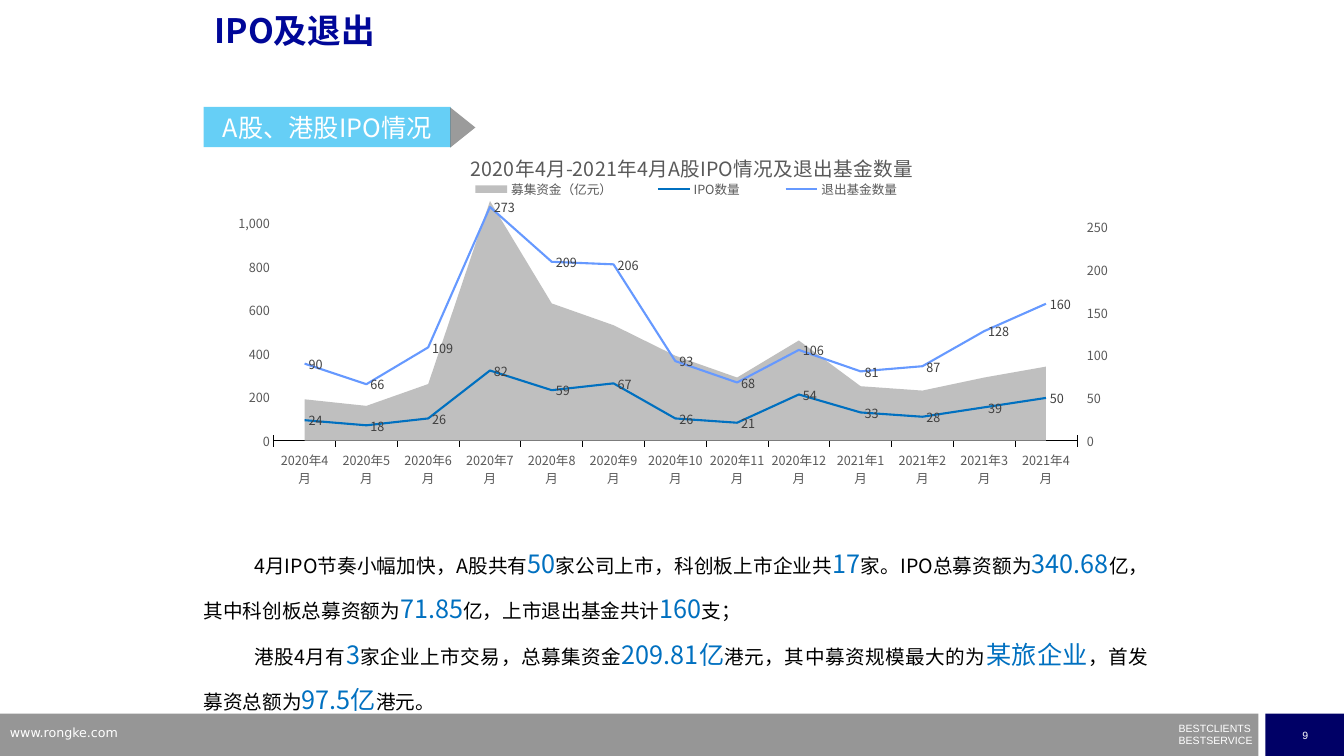
from lxml import etree
from pptx import Presentation
from pptx import util as u
from pptx.chart.data import CategoryChartData
from pptx.dml.color import RGBColor
from pptx.enum import chart as ch, shapes, text
from pptx.oxml import parse_xml
from pptx.oxml.ns import nsdecls, qn

CJK = "Noto Sans CJK SC"
COLORS = {"white": "FFFFFF", "black": "000000", "bar": "969696", "navy": "000066",
          "title": "000798", "tag": "00B0F0", "arrow": "595959", "accent": "0070C0",
          "label": "404040", "area": "BFBFBF", "exits": "6699FF"}

TITLE = "IPO及退出"
TAG = "A股、港股IPO情况"
CHART_TITLE = "2020年4月-2021年4月A股IPO情况及退出基金数量"
MONTHS = ([f"2020年{month}月" for month in range(4, 13)]
          + [f"2021年{month}月" for month in range(1, 5)])
SERIES = [
    ("募集资金（亿元）", "area", [190, 160, 260, 1100, 630, 530, 390, 290, 460, 250, 230, 290, 340]),
    ("IPO数量", "accent", [24, 18, 26, 82, 59, 67, 26, 21, 54, 33, 28, 39, 50]),
    ("退出基金数量", "exits", [90, 66, 109, 273, 209, 206, 93, 68, 106, 81, 87, 128, 160]),
]
# Runs alternate between plain text and highlighted figures.
SUMMARY = [
    ["4月IPO节奏小幅加快，A股共有", "50", "家公司上市，科创板上市企业共", "17",
     "家。IPO总募资额为", "340.68", "亿，其中科创板总募资额为", "71.85",
     "亿，上市退出基金共计", "160", "支；"],
    ["港股4月有", "3", "家企业上市交易，总募集资金", "209.81亿",
     "港元，其中募资规模最大的为", "某旅企业", "，首发募资总额为", "97.5亿", "港元。"],
]
PLOT_BOX = (0.082, 0.155, 0.843, 0.61)
LEGEND_BOX = (0.25, 0.1, 0.53, 0.05)
TITLE_POINT = (0.285, 0.02)


def set_attributes(target, **values):
    for name, value in values.items():
        setattr(target, name, value)


def set_font(font, size, color, name=CJK, bold=False):
    """Set the font for both Latin and East Asian characters."""
    set_attributes(font, size=u.Pt(size), name=name, bold=bold)
    font.color.rgb = RGBColor.from_string(COLORS[color])
    etree.SubElement(font._rPr, qn("a:ea")).set("typeface", name)


def add_run(paragraph, words, *font):
    run = paragraph.add_run()
    run.text = words
    set_font(run.font, *font)


def add_filled(slide, preset, box, color, opacity=None):
    shape = slide.shapes.add_shape(preset, *map(u.Inches, box))
    shape.shadow.inherit = False
    shape.fill.solid()
    shape.fill.fore_color.rgb = RGBColor.from_string(COLORS[color])
    shape.line.fill.background()
    if opacity:
        rgb = shape.fill._xPr.find(".//" + qn("a:srgbClr"))
        etree.SubElement(rgb, qn("a:alpha")).set("val", str(opacity * 1000))
    return shape


def add_centred(shape, words, *font, wrap=True):
    set_attributes(shape.text_frame, word_wrap=wrap, vertical_anchor=text.MSO_ANCHOR.MIDDLE)
    paragraph = shape.text_frame.paragraphs[0]
    paragraph.alignment = text.PP_ALIGN.CENTER
    add_run(paragraph, words, *font)


def add_text(slide, box, paragraphs, inset=True, indent=0, **layout):
    """Add a text box; each paragraph is a list of (words, size, colour, ...) runs."""
    frame = slide.shapes.add_textbox(*map(u.Inches, box)).text_frame
    frame.word_wrap = True
    if not inset:
        set_attributes(frame, margin_left=0, margin_top=0, margin_right=0, margin_bottom=0)
    for index, runs in enumerate(paragraphs):
        paragraph = frame.add_paragraph() if index else frame.paragraphs[0]
        set_attributes(paragraph, **layout)
        if not index:
            paragraph.space_before = u.Pt(0)
        if indent:
            paragraph._p.get_or_add_pPr().set("indent", str(u.Inches(indent)))
        for run in runs:
            add_run(paragraph, *run)


def layout_xml(box, inner=False):
    target = '<c:layoutTarget val="inner"/>' if inner else ""
    modes = "".join(f'<c:{axis}Mode val="edge"/>' for axis in "xy")
    sizes = "".join(f'<c:{key} val="{value}"/>' for key, value in zip("xywh", box))
    return parse_xml(f'<c:layout {nsdecls("c")}><c:manualLayout>{target}{modes}{sizes}'
                     '</c:manualLayout></c:layout>')


def place(element, box, after=None, inner=False):
    """Give a chart part a fixed position, as fractions of the chart."""
    for old in element.findall(qn("c:layout")):
        element.remove(old)
    previous = element.find(qn(after)) if after else None
    element.insert(0 if previous is None else element.index(previous) + 1,
                   layout_xml(box, inner))


def move_to_right_axis(plot_area):
    """Turn all series but the first into lines on a second value axis."""
    area = plot_area.find(qn("c:areaChart"))
    lines = parse_xml(f'<c:lineChart {nsdecls("c")}><c:grouping val="standard"/>'
                      '<c:varyColors val="0"/><c:marker val="1"/>'
                      '<c:axId val="5001"/><c:axId val="5002"/></c:lineChart>')
    for offset, series in enumerate(area.findall(qn("c:ser"))[1:]):
        lines.insert(2 + offset, series)
    area.addnext(lines)
    last_axis = plot_area.find(qn("c:valAx"))
    last_axis.find(qn("c:crossBetween")).set("val", "between")
    for kind, own, other, hidden, side, extra in (
            ("valAx", 5002, 5001, 0, "r",
             '<c:crosses val="max"/><c:crossBetween val="between"/><c:majorUnit val="50"/>'),
            ("catAx", 5001, 5002, 1, "b", '<c:crosses val="autoZero"/>')):
        limits = '<c:max val="280"/><c:min val="0"/>' if kind == "valAx" else ""
        last_axis.addnext(parse_xml(
            f'<c:{kind} {nsdecls("c", "a")}><c:axId val="{own}"/><c:scaling>'
            f'<c:orientation val="minMax"/>{limits}</c:scaling><c:delete val="{hidden}"/>'
            f'<c:axPos val="{side}"/><c:numFmt formatCode="0" sourceLinked="0"/>'
            '<c:majorTickMark val="out"/><c:minorTickMark val="none"/>'
            '<c:tickLblPos val="nextTo"/><c:spPr><a:ln><a:noFill/></a:ln></c:spPr>'
            '<c:txPr><a:bodyPr/><a:p><a:pPr><a:defRPr sz="900"><a:solidFill>'
            f'<a:srgbClr val="{COLORS["arrow"]}"/></a:solidFill><a:latin typeface="{CJK}"/>'
            f'<a:ea typeface="{CJK}"/></a:defRPr></a:pPr></a:p></c:txPr>'
            f'<c:crossAx val="{other}"/>{extra}</c:{kind}>'))


def add_ipo_chart(slide, box):
    data = CategoryChartData()
    data.categories = MONTHS
    for name, _, values in SERIES:
        data.add_series(name, values)
    chart = slide.shapes.add_chart(ch.XL_CHART_TYPE.AREA, *map(u.Inches, box), data).chart
    set_font(chart.font, 10, "black")

    chart.has_title = True
    add_run(chart.chart_title.text_frame.paragraphs[0], CHART_TITLE, 14, "arrow")
    place(chart.chart_title._element, TITLE_POINT, "c:tx")
    chart.has_legend = True
    set_attributes(chart.legend, position=ch.XL_LEGEND_POSITION.TOP, include_in_layout=False)
    set_font(chart.legend.font, 9, "arrow")
    place(chart.legend._element, LEGEND_BOX, "c:legendPos")

    months, funds = chart.category_axis, chart.value_axis
    set_attributes(months, major_tick_mark=ch.XL_TICK_MARK.CROSS, has_major_gridlines=False)
    months.format.line.width = u.Pt(0.5)
    months.format.line.color.rgb = RGBColor.from_string(COLORS["black"])
    set_attributes(funds, minimum_scale=0, maximum_scale=1100, major_unit=200,
                   has_major_gridlines=False, major_tick_mark=ch.XL_TICK_MARK.NONE)
    set_attributes(funds.tick_labels, number_format="#,##0", number_format_is_linked=False)
    funds.format.line.fill.background()
    for axis in (months, funds):
        set_font(axis.tick_labels.font, 9, "arrow")

    plot_area = chart._chartSpace.chart.plotArea
    place(plot_area, PLOT_BOX, inner=True)
    move_to_right_axis(plot_area)
    area_plot, line_plot = chart.plots
    area_plot.vary_by_categories = False
    fill = area_plot.series[0].format.fill
    fill.solid()
    fill.fore_color.rgb = RGBColor.from_string(COLORS[SERIES[0][1]])
    for series, (_, color, _) in zip(line_plot.series, SERIES[1:]):
        series.smooth = False
        series.marker.style = ch.XL_MARKER_STYLE.NONE
        series.format.line.width = u.Pt(1.5)
        series.format.line.color.rgb = RGBColor.from_string(COLORS[color])
        set_attributes(series.data_labels, show_value=True, number_format="0",
                       number_format_is_linked=False, position=ch.XL_LABEL_POSITION.RIGHT)
        set_font(series.data_labels.font, 9, "label")


def main():
    presentation = Presentation()
    set_attributes(presentation, slide_width=u.Inches(13.33), slide_height=u.Inches(7.5))
    slide = presentation.slides.add_slide(presentation.slide_layouts[6])
    preset = shapes.MSO_SHAPE

    add_filled(slide, preset.RECTANGLE, (0, 7.08, 12.48, 0.42), "bar")
    page = add_filled(slide, preset.RECTANGLE, (12.55, 7.08, 0.79, 0.42), "navy")
    add_centred(page, "9", 7.5, "white", "Arial", wrap=False)
    slogan = [[(words, 7.5, "white", "Arial")] for words in ("BESTCLIENTS", "BESTSERVICE")]
    add_text(slide, (11.69, 7.22, 0.76, 0.2), slogan, inset=False,
             line_spacing=0.5, space_before=u.Pt(4))
    add_text(slide, (0, 7.14, 3.2, 0.26), [[("www.rongke.com", 9, "white", "DejaVu Sans")]])

    tag = add_filled(slide, preset.RECTANGLE, (2.02, 1.06, 2.45, 0.4), "tag", 60)
    add_centred(tag, TAG, 18, "white", wrap=True)
    add_filled(slide, preset.ISOSCELES_TRIANGLE, (4.39, 1.14, 0.4, 0.25), "arrow", 60).rotation = 90

    styles = [(14, "black"), (18, "accent")]
    summary = [[(words, *styles[index % 2]) for index, words in enumerate(runs)]
               for runs in SUMMARY]
    add_text(slide, (2.02, 5.29, 9.37, 1.76), summary, inset=False, indent=0.5,
             line_spacing=1.5, alignment=text.PP_ALIGN.JUSTIFY)
    add_text(slide, (2.03, 0.09, 9, 0.7), [[(TITLE, 24, "title", CJK, True)]], line_spacing=0.9)
    add_ipo_chart(slide, (1.94, 1.39, 9.45, 3.9))
    presentation.save("out.pptx")


if __name__ == "__main__":
    main()
